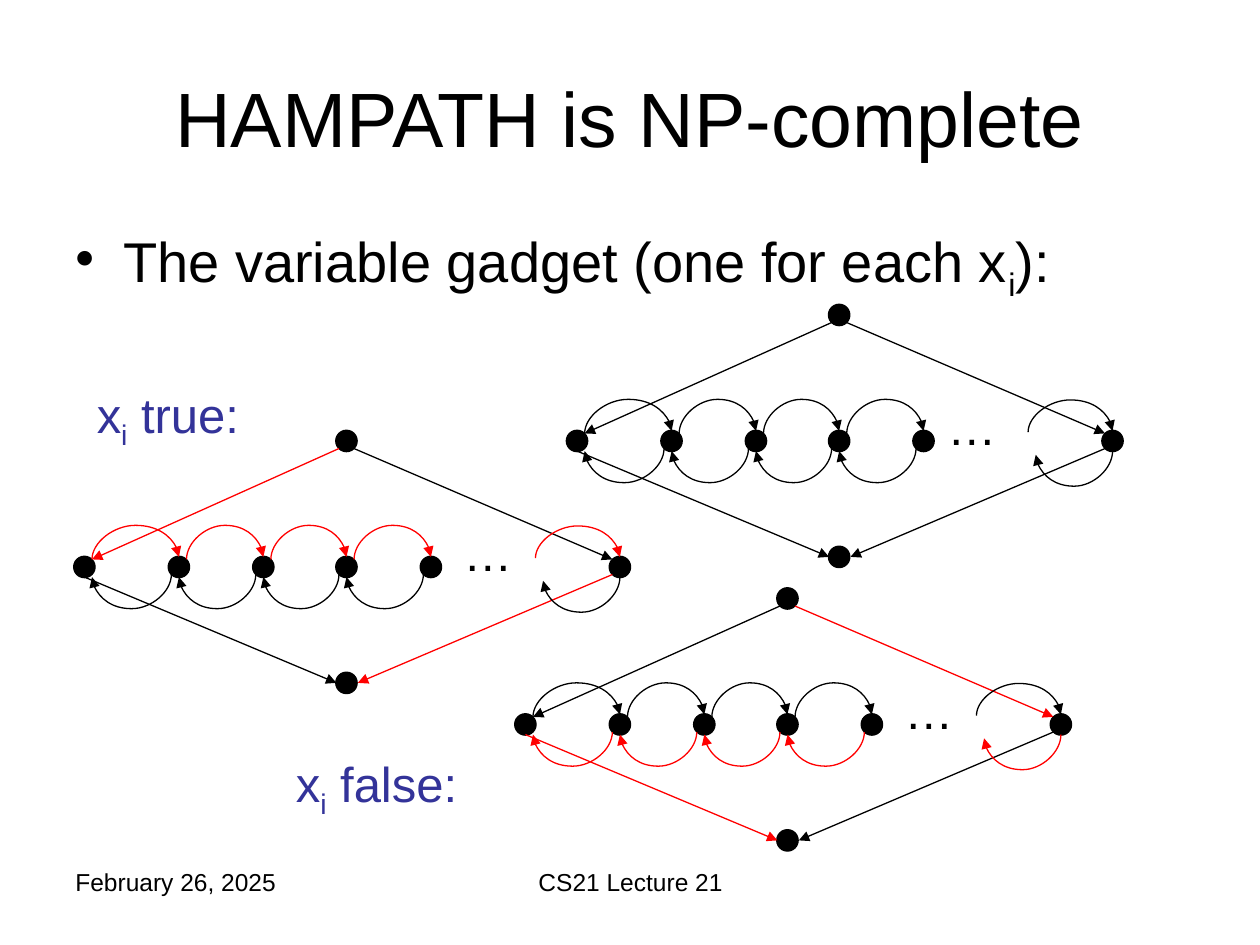
"""Build the slide on the variable gadget of the HAMPATH reduction."""
import pptx
import pptx.dml.color
import pptx.enum.shapes
import pptx.enum.text
import pptx.oxml
import pptx.oxml.ns
import pptx.util
from pptx.util import Inches

BLACK = pptx.dml.color.RGBColor(0x00, 0x00, 0x00)
RED = pptx.dml.color.RGBColor(0xFF, 0x00, 0x00)
INDIGO = pptx.dml.color.RGBColor(0x33, 0x33, 0x99)
CENTER = pptx.enum.text.PP_ALIGN.CENTER
CONNECTOR = pptx.enum.shapes.MSO_CONNECTOR
NODE_SIZE = 0.17
ROW = (0, 0.75, 1.42, 2.08, 2.75, 4.25)
MIDDLE, TOP, BOTTOM = 2.08, -1, 0.92


def format_text(shape, size, color, align=None):
    """Format the single paragraph of a shape."""
    para = shape.text_frame.paragraphs[0]
    para.alignment = align
    for span in para.runs:
        span.font.name = "Arial"
        span.font.size = pptx.util.Pt(size)
        span.font.color.rgb = color


def add_text(page, place, parts, size, color=BLACK, align=None):
    """Add a text box whose second part, if any, is a subscript."""
    box = page.shapes.add_textbox(*map(Inches, place))
    box.text_frame.word_wrap = True
    for part in parts:
        box.text_frame.paragraphs[0].add_run().text = part
    format_text(box, size, color, align)
    for properties in box.element.xpath(".//a:rPr")[1:2]:
        properties.set("baseline", "-25000")
    return box


def add_bullet(box):
    """Give the paragraph of a box a hanging bullet."""
    properties = box.element.xpath(".//a:p")[0].get_or_add_pPr()
    properties.set("marL", str(Inches(0.38)))
    properties.set("indent", str(Inches(-0.38)))
    bullet = pptx.oxml.parse_xml(
        f'<a:buChar {pptx.oxml.ns.nsdecls("a")} char="•"/>')
    properties.append(bullet)


def add_node(page, x, y):
    """Add a black graph node centred on a point."""
    node = page.shapes.add_shape(
        pptx.enum.shapes.MSO_SHAPE.OVAL, Inches(x - NODE_SIZE / 2),
        Inches(y - NODE_SIZE / 2), Inches(NODE_SIZE), Inches(NODE_SIZE))
    node.shadow.inherit = False
    node.fill.solid()
    node.fill.fore_color.rgb = BLACK
    node.line.color.rgb = BLACK
    node.line.width = pptx.util.Pt(0.75)


def add_arrow(page, kind, start, end, color):
    """Add a connector with a triangular head at its end."""
    arrow = page.shapes.add_connector(kind, *map(Inches, (*start, *end)))
    arrow.line.color.rgb = color
    arrow.line.width = pptx.util.Pt(0.75)
    namespace = pptx.oxml.ns.nsdecls("a")
    arrow.get_or_add_ln().append(
        pptx.oxml.parse_xml(f'<a:tailEnd {namespace} type="triangle"/>'))
    arrow.element.spPr.append(
        pptx.oxml.parse_xml(f"<a:effectLst {namespace}/>"))
    return arrow


def add_arc(page, start, end, bend, color):
    """Add a curved arrow that swings out to the height of bend."""
    width, height = abs(end[1] - start[1]), abs(end[0] - start[0])
    left = (start[0] + end[0] - width) / 2
    top = (start[1] + end[1] - height) / 2
    arc = add_arrow(page, CONNECTOR.CURVE, (left, top),
                    (left + width, top + height), color)
    turn = 270 if bend < start[1] else 90
    arc.element.xpath("./p:spPr/a:xfrm")[0].set("rot", str(turn * 60000))
    ratio = round(abs(bend - start[1]) / width * 100000)
    arc.element.xpath(".//a:avLst")[0].append(pptx.oxml.parse_xml(
        f'<a:gd {pptx.oxml.ns.nsdecls("a")} name="adj1" fmla="val {ratio}"/>'))


def add_gadget(page, x, y, dots, forward=BLACK, backward=BLACK):
    """Add a gadget whose leftmost node is centred on a point."""
    def at(across, down):
        return x + across, y + down

    for place in [(step, 0) for step in ROW] + [(MIDDLE, TOP), (MIDDLE, BOTTOM)]:
        add_node(page, *at(*place))

    edges = [((2.02, -0.94), (0.06, -0.06), forward),
             ((2.14, -0.94), (4.19, -0.06), backward),
             ((0, 0.08), (2, BOTTOM), backward),
             ((4.19, 0.06), (2.17, BOTTOM), forward)]
    for start, end, color in edges:
        add_arrow(page, CONNECTOR.STRAIGHT, at(*start), at(*end), color)

    for near, far in zip(ROW[:4], ROW[1:5]):
        add_arc(page, at(near + 0.06, -0.06), at(far, -0.08), y - 0.33, forward)
        landing = near if near else 0.06
        add_arc(page, at(far - 0.06, 0.06), at(landing, 0.08), y + 0.33, backward)
    add_arc(page, at(3.58, -0.07), at(ROW[-1], -0.08), y - 0.33, forward)
    add_arc(page, at(ROW[-1], 0.08), at(3.64, 0.11), y + 0.36, backward)
    add_text(page, (*at(dots, -0.4), 0.75, 0.57), ["…"], 28)


def main():
    """Build and save the slide."""
    deck = pptx.Presentation()
    deck.slide_width, deck.slide_height = Inches(10), Inches(7.5)
    page = deck.slides.add_slide(deck.slide_layouts[5])

    title = page.shapes.title
    title.left, title.top = Inches(0.5), Inches(0.3)
    title.width, title.height = Inches(9), Inches(1.25)
    title.text_frame.text = "HAMPATH is NP-complete"
    title.text_frame.vertical_anchor = pptx.enum.text.MSO_ANCHOR.MIDDLE
    format_text(title, 44, BLACK, CENTER)

    add_bullet(add_text(page, (0.5, 1.75, 9, 0.83),
                        ["The variable gadget (one for each x", "i", "):"], 32))
    add_gadget(page, 4.58, 3.5, 2.84)
    add_gadget(page, 0.67, 4.5, 2.91, forward=RED)
    add_gadget(page, 4.17, 5.75, 2.91, backward=RED)
    add_text(page, (0.67, 3, 2.5, 0.57), ["x", "i", " true:"], 28, INDIGO)
    add_text(page, (2.25, 5.93, 2.5, 0.57), ["x", "i", " false:"], 28, INDIGO)
    add_text(page, (0.5, 6.83, 2.33, 0.52), ["February 26, 2025"], 14)
    add_text(page, (3.42, 6.83, 3.17, 0.52), ["CS21 Lecture 21"], 14, align=CENTER)
    deck.save("out.pptx")


if __name__ == "__main__":
    main()
